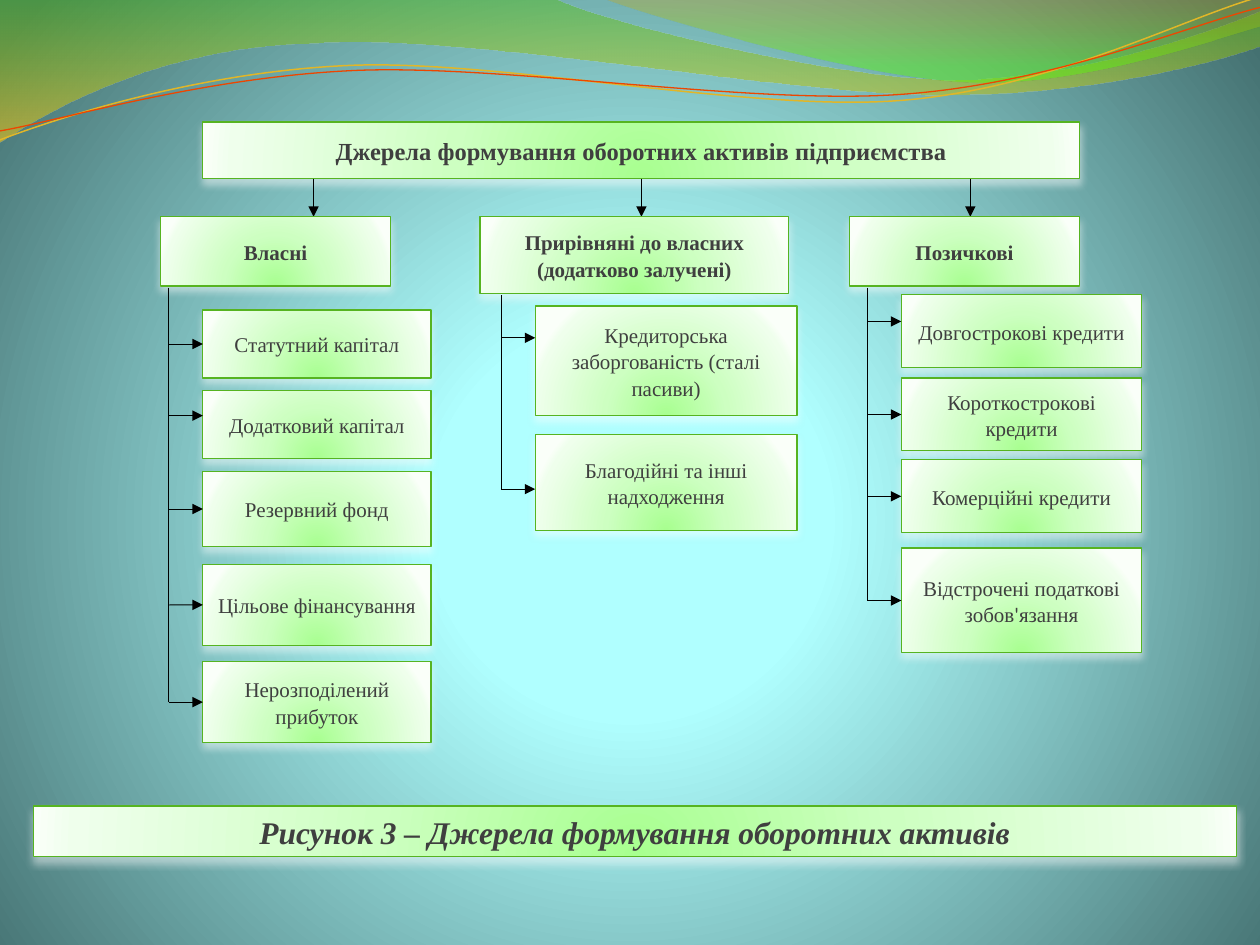
from lxml import etree
from pptx import Presentation
from pptx.dml.color import RGBColor
from pptx.enum import shapes, text
from pptx.oxml import ns
from pptx.util import Cm, Pt

C = {
    "text": "3F3F3F", "border": "56B421", "shadow": "FFFFFF", "arrow": "000000",
    "box0": "A8FF90", "box1": "CDFFC1", "box2": "EFFFEC", "box3": "FAFFF9",
    "bg0": "B3FFFF", "bg1": "B0FFFF", "bg2": "447171",
    "green": "53C015", "yellow": "FFC811", "ochre": "D4A50A", "lime": "5EF608",
    "gold": "E1B628", "orange": "ED4600",
}
BOX_STOPS = [(0, "box0", 100), (43, "box1", 100), (93, "box2", 100), (100, "box3", 100)]
BG_STOPS = [(0, "bg0", 100), (25, "bg1", 100), (100, "bg2", 100)]
HEAD = {"size": Pt(12), "bold": True}
ITEM = {"size": Pt(12), "bold": False}

WAVES = [
    ((0, 0), [(11.18, -0.03), (12.09, 0.43, 16.87, 1.6, 19.25, 1.6),
              (21.67, 1.6, 24.33, 0.66, 25.4, 0.23), (25.43, 0.91),
              (24.97, 1.12, 22.1, 1.93, 18.95, 1.91), (15.8, 1.91, 9.7, 0.71, 6.53, 0.86),
              (3.28, 0.91, 1.17, 2.11, -0.03, 2.87)],
     [(0, "green", 45), (100, "yellow", 55)]),
    ((12.17, -0.03), [(12.93, 0.28, 17.32, 1.57, 19.53, 1.65),
                      (21.74, 1.75, 24.41, 0.81, 25.4, 0.53), (25.4, 0)],
     [(0, "ochre", 30), (80, "lime", 45)]),
]
RIBBONS = [
    ((0, 2.82), [(1.22, 2.36, 4.01, 1.45, 7.04, 1.32), (10.03, 1.19, 15.06, 2.26, 18.11, 2.03),
                 (21.16, 1.8, 23.83, 0.38, 25.35, -0.05)], "gold", 0.85),
    ((0, 2.64), [(1.19, 2.44, 4.09, 1.55, 7.19, 1.42), (10.24, 1.3, 15.16, 2.13, 18.21, 1.9),
                 (21.23, 1.68, 23.9, 0.53, 25.4, 0.15)], "orange", 0.75),
]

BRANCHES = [
    {"box": (3.23, 4.37, 4.65, 1.4), "title": "Власні", "spine": 0.17, "indent": 0.86, "width": 4.6,
     "items": [("Статутний капітал", 1.88, 1.37, None), ("Додатковий капітал", 3.5, 1.37, 4.01),
               ("Резервний фонд", 5.13, 1.52, None), ("Цільове фінансування", 7.01, 1.63, None),
               ("Нерозподілений прибуток", 8.97, 1.63, None)]},
    {"box": (9.68, 4.37, 6.22, 1.55), "title": "Прирівняні до власних (додатково залучені)",
     "spine": 0.42, "indent": 1.11, "width": 5.28,
     "items": [("Кредиторська заборгованість (сталі пасиви)", 1.8, 2.21, 2.44),
               ("Благодійні та інші надходження", 4.39, 1.93, 5.49)]},
    {"box": (17.12, 4.37, 4.65, 1.4), "title": "Позичкові", "spine": 0.36, "indent": 1.05, "width": 4.85,
     "items": [("Довгострокові кредити", 1.57, 1.47, 2.11), ("Короткострокові кредити", 3.25, 1.47, None),
               ("Комерційні кредити", 4.9, 1.47, None),
               ("Відстрочені податкові зобов'язання", 6.68, 2.11, None)]},
]


def rgb(name):
    return RGBColor.from_string(C[name])


def add(parent, tag, **attrs):
    return etree.SubElement(parent, ns.qn(tag), {k: str(v) for k, v in attrs.items()})


def add_color(parent, name, alpha):
    clr = add(parent, "a:srgbClr", val=C[name])
    if alpha < 100:
        add(clr, "a:alpha", val=alpha * 1000)


def gradient(fill, holder, stops, focus=None):
    fill.solid()
    solid = holder.find(ns.qn("a:solidFill"))
    grad = etree.Element(ns.qn("a:gradFill"), rotWithShape="1")
    gs_lst = add(grad, "a:gsLst")
    for pos, name, alpha in stops:
        add_color(add(gs_lst, "a:gs", pos=pos * 1000), name, alpha)
    if focus:
        sides = {k: v * 1000 for k, v in zip("ltrb", focus)}
        add(add(grad, "a:path", path="circle"), "a:fillToRect", **sides)
    else:
        add(grad, "a:lin", ang=5400000, scaled=0)
    holder.replace(solid, grad)


def style_box(sp, label, fmt, spacing=1.0):
    spPr = sp._element.spPr
    gradient(sp.fill, spPr, BOX_STOPS, (50, 130, 50, -30))
    sp.line.color.rgb, sp.line.width = rgb("border"), Pt(0.75)
    sp.shadow.inherit = False
    shadow = add(spPr.find(ns.qn("a:effectLst")), "a:outerShdw", blurRad=Pt(4.5), dist=Pt(3),
                 dir=5400000, rotWithShape=0)
    add_color(shadow, "shadow", 48)
    tf = sp.text_frame
    tf.word_wrap, tf.vertical_anchor = True, text.MSO_ANCHOR.MIDDLE
    p = tf.paragraphs[0]
    p.alignment, p.line_spacing = text.PP_ALIGN.CENTER, spacing
    if spacing > 1:
        p.space_after = Pt(8)
    before, mark, after = label.partition("'")
    for part, font in ((before, "Times New Roman"), (mark, "Calibri"), (after, "Times New Roman")):
        if part:
            r = p.add_run()
            r.text = part
            r.font.name, r.font.color.rgb = font, rgb("text")
            for key, value in fmt.items():
                setattr(r.font, key, value)
    return sp


def add_box(s, box, label, fmt, spacing=1.0):
    sp = s.shapes.add_shape(shapes.MSO_SHAPE.RECTANGLE, *map(Cm, box))
    return style_box(sp, label, fmt, spacing)


def add_line(s, x1, y1, x2, y2, arrow=True):
    ln = s.shapes.add_connector(shapes.MSO_CONNECTOR.STRAIGHT, *map(Cm, (x1, y1, x2, y2)))
    ln.line.color.rgb, ln.line.width = rgb("arrow"), Pt(0.5)
    if arrow:
        add(ln.line._get_or_add_ln(), "a:tailEnd", type="triangle")
    add(ln._element.spPr, "a:effectLst")
    return ln


def add_curve(s, start, segments, close):
    fb = s.shapes.build_freeform(Cm(start[0]), Cm(start[1]))
    fb.add_line_segments([(Cm(seg[-2]), Cm(seg[-1])) for seg in segments], close=close)
    sp = fb.convert_to_shape()
    sp.shadow.inherit = False
    lines = list(sp._element.spPr.iter(ns.qn("a:lnTo")))
    for node, seg in zip(lines, segments):
        if len(seg) == 6:
            bez = etree.Element(ns.qn("a:cubicBezTo"))
            for x, y in zip(seg[::2], seg[1::2]):
                add(bez, "a:pt", x=Cm(x) - sp.left, y=Cm(y) - sp.top)
            node.getparent().replace(node, bez)
    return sp


def draw_backdrop(s):
    fill = s.background.fill
    fill.solid()
    gradient(fill, s._element.find(".//" + ns.qn("p:bgPr")), BG_STOPS, (10, 110, 10, 100))
    for start, segments, stops in WAVES:
        sp = add_curve(s, start, segments, True)
        gradient(sp.fill, sp._element.spPr, stops)
        sp.line.fill.background()
    for start, segments, color, width in RIBBONS:
        sp = add_curve(s, start, segments, False)
        sp.fill.background()
        sp.line.color.rgb, sp.line.width = rgb(color), Pt(width)


def draw_caption(s, box):
    sp = s.shapes.title
    sp.left, sp.top, sp.width, sp.height = map(Cm, box)
    style_box(sp, "Рисунок 3 – Джерела формування оборотних активів",
              {"size": Pt(18), "bold": True, "italic": True})
    sp.text_frame.auto_size = text.MSO_AUTO_SIZE.NONE


def draw_root(s, box, drop):
    x, y, w, h = box
    root = add_box(s, box, "Джерела формування оборотних активів підприємства",
                   {"size": Pt(14), "bold": True})
    for dx in (2.23, w / 2, 15.47):
        ln = add_line(s, x + dx, y + h, x + dx, y + h + drop)
        if dx == w / 2:
            ln.begin_connect(root, 2)


def draw_branch(s, box, title, spine, indent, width, items):
    x, y, w, h = box
    add_box(s, box, title, HEAD, 1.06)
    for label, top, height, arrow in items:
        sp = add_box(s, (x + indent, y + top, width, height), label, ITEM, 1.05)
        dy = arrow or top + height / 2
        ln = add_line(s, x + spine, y + dy, x + indent, y + dy)
        if arrow is None:
            ln.end_connect(sp, 1)
    add_line(s, x + spine, y + h + 0.03, x + spine, y + dy, arrow=False)


def main():
    prs = Presentation()
    prs.slide_width, prs.slide_height = Cm(25.4), Cm(19.05)
    s = prs.slides.add_slide(prs.slide_layouts[5])
    draw_backdrop(s)
    draw_caption(s, (0.67, 16.25, 24.26, 1.02))
    draw_root(s, (4.09, 2.46, 17.68, 1.14), 0.77)
    for branch in BRANCHES:
        draw_branch(s, **branch)
    prs.save("out.pptx")


if __name__ == "__main__":
    main()
